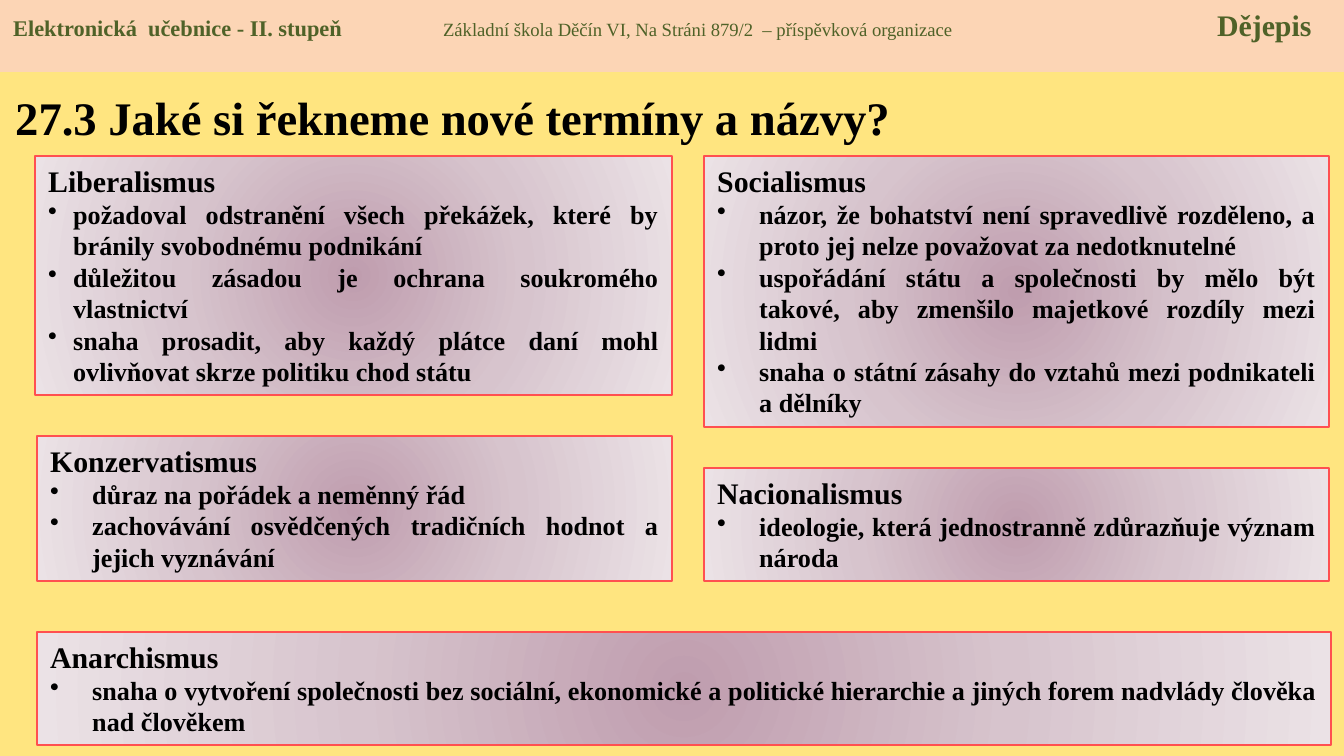
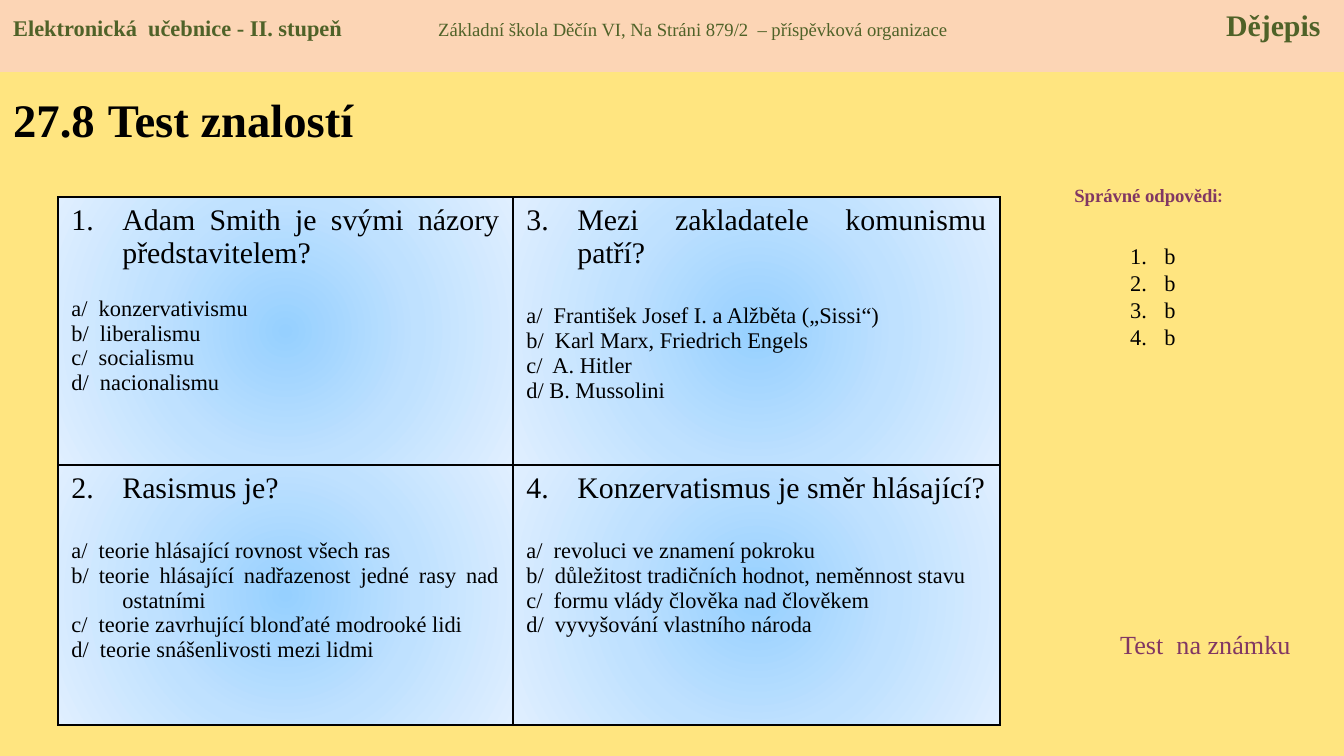
from dataclasses import dataclass

from lxml.etree import SubElement
from pptx import Presentation
from pptx.dml.color import RGBColor
from pptx.enum.shapes import MSO_SHAPE
from pptx.enum.text import MSO_ANCHOR, PP_ALIGN
from pptx.oxml.ns import qn
from pptx.util import Pt

PX = 914400 / 134.4  # EMU in one px


def emu(px):
    return round(px * PX)


# Colours and type sizes
@dataclass(frozen=True)
class Theme:
    font: str = "Times New Roman"
    alt: str = "Calibri"
    page: str = "FFE580"
    band: str = "FCD5B5"
    green: str = "4F6228"
    plum: str = "813763"
    ink: str = "000000"
    edge: str = "FF5050"
    card: tuple = ("BF9DAE", "D7C4CD", "EBE2E6")
    cell: tuple = ("96D0FF", "BFE1FF", "E0EFFF")
    title: int = 25
    head: int = 16
    body: int = 14
    text: int = 12
    small: int = 10


T = Theme()


@dataclass
class Run:
    text: str
    size: int = T.text
    bold: bool = False
    color: str = T.ink
    font: str = T.font


@dataclass
class Para:
    runs: list
    align: PP_ALIGN = PP_ALIGN.LEFT
    hang: int = 0       # hanging indent in px
    mark: object = None  # bullet character or number
    gap: float = 0      # points before
    lead: float = 0     # points from line to line
    tabs: tuple = ()    # tab stops in px


def glow(parent, tones):
    """Round gradient from the centre outwards."""
    grad = SubElement(parent, qn("a:gradFill"), rotWithShape="1")
    stops = SubElement(grad, qn("a:gsLst"))
    for i, tone in enumerate(tones):
        stop = SubElement(stops, qn("a:gs"), pos=str(i * 50000))
        SubElement(stop, qn("a:srgbClr"), val=tone)
    way = SubElement(grad, qn("a:path"), path="circle")
    sides = {side: "50000" for side in "ltrb"}
    SubElement(way, qn("a:fillToRect"), **sides)


class Deck:
    def __init__(self):
        self.prs = Presentation()
        self.prs.slide_width, self.prs.slide_height = emu(1344), emu(756)
        self.slide = None

    # Page with band and title
    def page(self, title, at, tabs):
        self.slide = self.prs.slides.add_slide(self.prs.slide_layouts[6])
        fill = self.slide.background.fill
        fill.solid()
        fill.fore_color.rgb = RGBColor.from_string(T.page)
        band = self.rect((0, 0, 1344, 72))
        band.fill.solid()
        band.fill.fore_color.rgb = RGBColor.from_string(T.band)
        band.line.fill.background()
        runs = [
            Run("Elektronická  učebnice - II. stupeň", T.text, True, T.green),
            Run("\tZákladní škola Děčín VI, Na Stráni 879/2  – příspěvková organizace",
                T.small, False, T.green),
            Run("\tDějepis", T.head, True, T.green),
        ]
        self.put(band.text_frame, [Para(runs, tabs=tabs)])
        self.label(at, [Para(title)], MSO_ANCHOR.MIDDLE)

    def rect(self, at):
        shape = self.slide.shapes.add_shape(MSO_SHAPE.RECTANGLE, *map(emu, at))
        shape.shadow.inherit = False
        shape.text_frame.word_wrap = True
        shape.text_frame.vertical_anchor = MSO_ANCHOR.TOP
        return shape

    def label(self, at, paras, anchor=MSO_ANCHOR.TOP):
        frame = self.slide.shapes.add_textbox(*map(emu, at)).text_frame
        frame.word_wrap = True
        frame.vertical_anchor = anchor
        self.put(frame, paras)

    # Term with its bullet points
    def card(self, at, term, points, hang=42):
        shape = self.rect(at)
        # The fill has to stand before the effect list
        props = shape._element.spPr
        glow(props, T.card)
        props.insert(2, props[-1])
        shape.line.color.rgb = RGBColor.from_string(T.edge)
        shape.line.width = Pt(0.75)
        just = PP_ALIGN.JUSTIFY
        paras = [Para([Run(term, T.head, True)], just)]
        paras += [Para([Run(point, T.body, True)], just, hang, "•") for point in points]
        self.put(shape.text_frame, paras)

    # Grid of questions, numbered down the columns
    def quiz(self, at, cols, rows, items):
        size = (sum(cols), sum(rows))
        table = self.slide.shapes.add_table(
            len(rows), len(cols), *map(emu, at + size)).table
        table.first_row = table.horz_banding = False
        for col, width in zip(table.columns, cols):
            col.width = emu(width)
        for row, height in zip(table.rows, rows):
            row.height = emu(height)
        just = PP_ALIGN.JUSTIFY
        for i, (ask, gap, picks) in enumerate(items):
            cell = table.cell(i % len(rows), i // len(rows))
            paras = [Para([Run(ask, T.head)], just, 51, i + 1)]
            paras += [Para([Run(pick)], just, 51, gap=0 if j else gap)
                      for j, pick in enumerate(picks)]
            self.put(cell.text_frame, paras)
            props = cell._tc.get_or_add_tcPr()
            for side in ("lnL", "lnR", "lnT", "lnB"):
                line = SubElement(props, qn("a:" + side), w=str(int(Pt(1))))
                solid = SubElement(line, qn("a:solidFill"))
                SubElement(solid, qn("a:srgbClr"), val=T.ink)
            glow(props, T.cell)

    def put(self, frame, paras):
        for i, para in enumerate(paras):
            p = frame.add_paragraph() if i else frame.paragraphs[0]
            p.alignment = para.align
            if para.gap:
                p.space_before = Pt(para.gap)
            if para.lead:
                p.line_spacing = Pt(para.lead)
            props = p._p.get_or_add_pPr()
            if para.hang:
                props.set("marL", str(emu(para.hang)))
                props.set("indent", str(-emu(para.hang)))
            if isinstance(para.mark, int):
                SubElement(props, qn("a:buAutoNum"), type="arabicPeriod",
                           startAt=str(para.mark))
            elif para.mark:
                SubElement(props, qn("a:buChar"), char=para.mark)
            if para.tabs:
                stops = SubElement(props, qn("a:tabLst"))
                for tab in para.tabs:
                    SubElement(stops, qn("a:tab"), pos=str(emu(tab)), algn="l")
            for part in para.runs:
                run = p.add_run()
                run.text = part.text
                run.font.name = part.font
                run.font.size = Pt(part.size)
                run.font.bold = part.bold
                run.font.color.rgb = RGBColor.from_string(part.color)


def terms(deck):
    deck.page([Run("27.3 Jaké si řekneme nové termíny a názvy?", T.title, True)],
              (2, 73, 1000, 87), (430, 1204))
    deck.card((35, 156, 637, 239), "Liberalismus", [
        "požadoval odstranění všech překážek, které by bránily svobodnému podnikání",
        "důležitou zásadou je ochrana soukromého vlastnictví",
        "snaha prosadit, aby každý plátce daní mohl ovlivňovat skrze politiku chod státu",
    ], 25)
    deck.card((704, 156, 625, 271), "Socialismus", [
        "názor, že bohatství není spravedlivě rozděleno, a proto jej nelze považovat za nedotknutelné",
        "uspořádání státu a společnosti by mělo být takové, aby zmenšilo majetkové rozdíly mezi lidmi",
        "snaha o státní zásahy do vztahů mezi podnikateli a dělníky",
    ])
    deck.card((37, 436, 635, 145), "Konzervatismus", [
        "důraz na pořádek a neměnný řád",
        "zachovávání osvědčených tradičních hodnot a jejich vyznávání",
    ])
    deck.card((704, 468, 625, 113), "Nacionalismus", [
        "ideologie, která jednostranně zdůrazňuje význam národa",
    ])
    deck.card((37, 632, 1294, 113), "Anarchismus", [
        "snaha o vytvoření společnosti bez sociální, ekonomické a politické hierarchie "
        "a jiných forem nadvlády člověka nad člověkem",
    ])


def test(deck):
    deck.page([Run("27.8", T.title, True), Run(" ", 28, True),
               Run("Test znalostí", T.title, True)],
              (0, 73, 429, 87), (425, 1213))
    deck.quiz((58, 197), (455, 487), (268, 260), [
        ("Adam Smith je svými názory představitelem?", 14, [
            "a/  konzervativismu", "b/  liberalismu",
            "c/  socialismu", "d/  nacionalismu"]),
        ("Rasismus je?", 18, [
            "a/  teorie hlásající rovnost všech ras",
            "b/ teorie hlásající nadřazenost jedné rasy nad ostatními",
            "c/  teorie zavrhující blonďaté modrooké lidi",
            "d/  teorie snášenlivosti mezi lidmi"]),
        ("Mezi zakladatele komunismu patří?", 18, [
            "a/  František Josef I. a Alžběta („Sissi“)",
            "b/  Karl Marx, Friedrich Engels",
            "c/  A. Hitler", "d/ B. Mussolini"]),
        ("Konzervatismus je směr hlásající?", 18, [
            "a/  revoluci ve znamení pokroku",
            "b/  důležitost tradičních hodnot, neměnnost stavu",
            "c/  formu vlády člověka nad člověkem",
            "d/  vyvyšování vlastního národa"]),
    ])
    # Answer key and graded test
    deck.label((1043, 177, 211, 36), [Para([
        Run("Správné odpovědi", T.small, True, T.plum),
        Run(":", T.small, True, T.plum, T.alt)], PP_ALIGN.CENTER)])
    deck.label((1117, 235, 74, 149),
               [Para([Run("b")], hang=34, mark=1, lead=14.5) for _ in range(4)])
    deck.label((1107, 622, 211, 46),
               [Para([Run("Test  na známku", T.body, False, T.plum)])])


def main():
    deck = Deck()
    terms(deck)
    test(deck)
    deck.prs.save("out.pptx")


if __name__ == "__main__":
    main()
